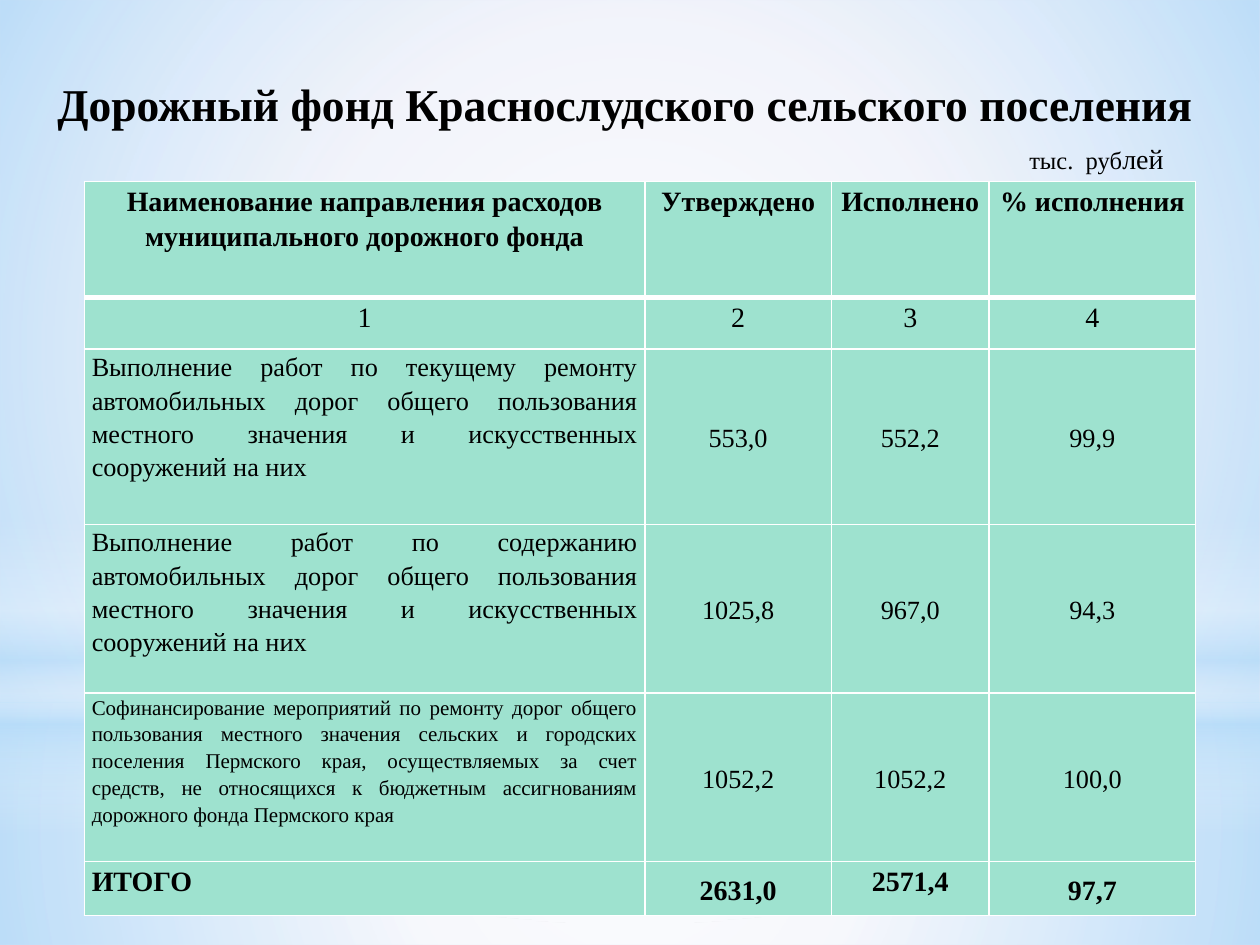
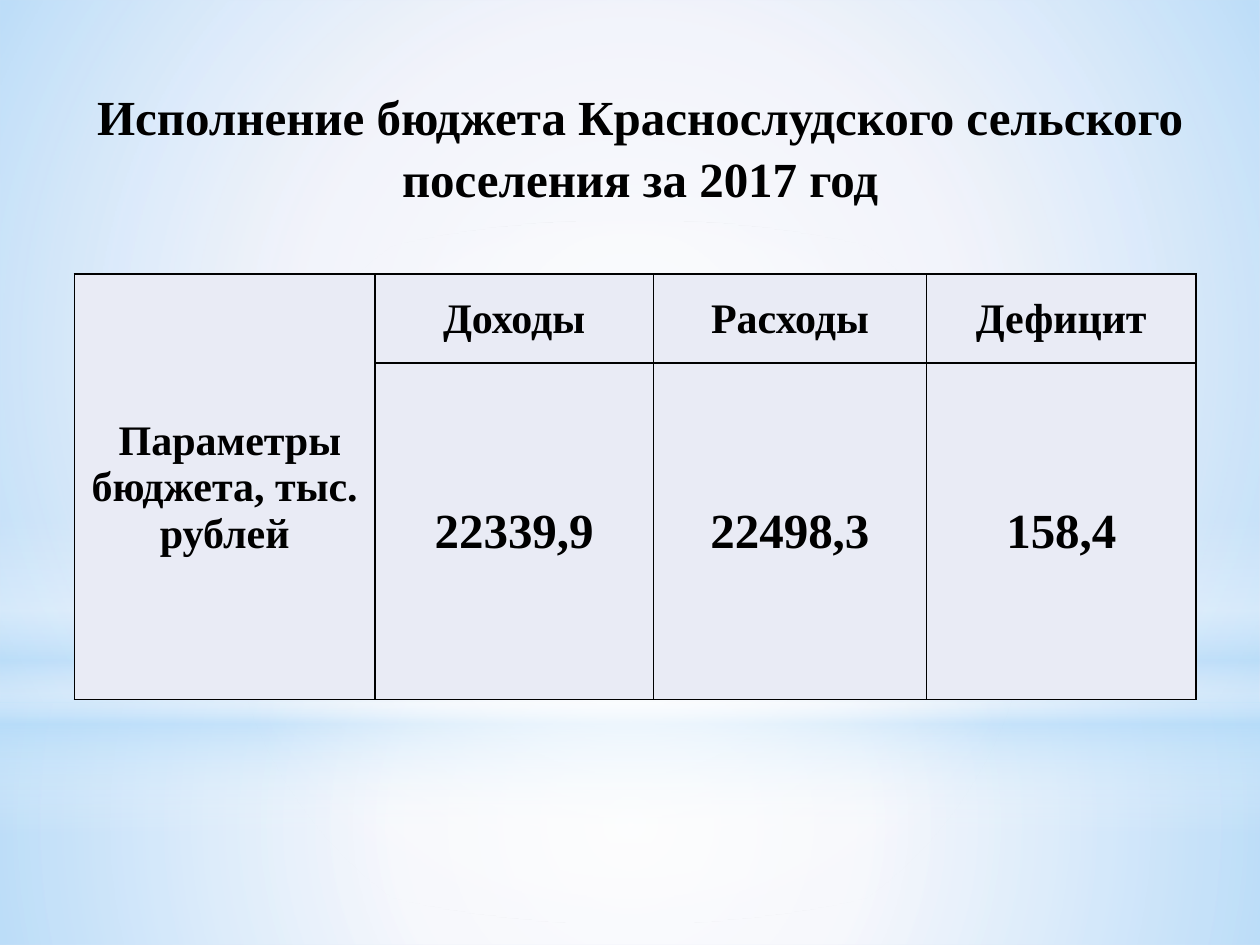
from lxml import etree
from pptx import Presentation
from pptx import util as u
from pptx.dml.color import RGBColor
from pptx.enum import shapes, text
from pptx.oxml import ns

BASE = RGBColor(0xDC, 0xE1, 0xF4)
WHITE = RGBColor(0xFF, 0xFF, 0xFF)
BLACK = RGBColor(0, 0, 0)
SKY = RGBColor(0xB4, 0xDC, 0xFA)
MINT = RGBColor(0x9E, 0xE2, 0xCF)
PALE = RGBColor(0xE9, 0xEB, 0xF5)
FONT = "Times New Roman"
WIDE, HIGH = 25.4, 19.05
LEFT, MID, JUST = text.PP_ALIGN.LEFT, text.PP_ALIGN.CENTER, text.PP_ALIGN.JUSTIFY
TOP, CORE = text.MSO_ANCHOR.TOP, text.MSO_ANCHOR.MIDDLE
RECT, OVAL = shapes.MSO_SHAPE.RECTANGLE, shapes.MSO_SHAPE.OVAL

# preset, top, height, stops (place %, colour, opacity %), radial
GLOWS = [
    (RECT, 14.17, 4.88, [(0, WHITE, 91), (37, WHITE, 76), (100, SKY, 79)], True),
    (RECT, 0, 14.17, [(0, WHITE, 89), (48, WHITE, 62), (100, SKY, 79)], True),
    (RECT, 10.46, 6.35, [(0, WHITE, 0), (29, WHITE, 30), (45, SKY, 40),
                         (55, WHITE, 26), (65, SKY, 60), (100, WHITE, 0)], False),
    (OVAL, 4.45, 14.17, [(0, WHITE, 100), (56, WHITE, 0)], True),
]

ROADS = [
    ["Наименование направления расходов муниципального дорожного фонда",
     "Утверждено", "Исполнено", "% исполнения"],
    ["1", "2", "3", "4"],
    ["Выполнение работ по текущему ремонту автомобильных дорог общего "
     "пользования местного значения и искусственных сооружений на них",
     "553,0", "552,2", "99,9"],
    ["Выполнение работ по содержанию автомобильных дорог общего "
     "пользования местного значения и искусственных сооружений на них",
     "1025,8", "967,0", "94,3"],
    ["Софинансирование мероприятий по ремонту дорог общего пользования "
     "местного значения сельских и городских поселения Пермского края, "
     "осуществляемых за счет средств, не относящихся к бюджетным "
     "ассигнованиям дорожного фонда Пермского края",
     "1052,2", "1052,2", "100,0"],
    ["ИТОГО", "2631,0", "2571,4", "97,7"],
]
BUDGET = [
    [" Параметры бюджета, тыс. рублей", "Доходы", "Расходы", "Дефицит"],
    ["", "22339,9", "22498,3", "158,4"],
]


def style(item, **look):
    for key, value in look.items():
        setattr(item, key, value)


def node(home, tag, **attrs):
    part = etree.SubElement(home, ns.qn("a:" + tag))
    for key, value in attrs.items():
        part.set(key, str(value))
    return part


def write(para, words, size, bold=False, align=LEFT, gap=1.0):
    style(para, alignment=align, line_spacing=gap)
    run = para.add_run()
    run.text = words
    style(run.font, name=FONT, size=u.Pt(size), bold=bold)
    run.font.color.rgb = BLACK


def fade(shape, stops, radial):
    """Fill a shape with a gradient whose stops have their own opacity."""
    shape.fill.background()
    props = shape.fill._xPr
    blank = props.find(ns.qn("a:noFill"))
    grad = etree.Element(ns.qn("a:gradFill"), rotWithShape="1")
    row = node(grad, "gsLst")
    for place, hue, alpha in stops:
        stop = node(row, "gs", pos=place * 1000)
        node(node(stop, "srgbClr", val=hue), "alpha", val=alpha * 1000)
    if radial:
        way = node(grad, "path", path="circle")
        node(way, "fillToRect", **dict.fromkeys("ltrb", 50000))
    else:
        node(grad, "lin", ang=5400000, scaled=0)
    props.replace(blank, grad)


def backdrop(slide):
    for kind, top, high, stops, radial in GLOWS:
        glow = slide.shapes.add_shape(kind, 0, u.Cm(top), u.Cm(WIDE), u.Cm(high))
        glow.shadow.inherit = False
        glow.line.fill.background()
        fade(glow, stops, radial)


def label(slide, box, wrap=True):
    frame = slide.shapes.add_textbox(*map(u.Cm, box)).text_frame
    style(frame, word_wrap=wrap, vertical_anchor=TOP)
    return frame.paragraphs[0]


def title(slide, box, words, size):
    write(label(slide, box), words, size, True, MID, 1.05)


def edge(cell, hue, **widths):
    """Draw the four cell borders, 1 pt unless a side names its width."""
    props = cell._tc.get_or_add_tcPr()
    for side in "LRTB":
        line = node(props, "ln" + side, w=u.Pt(widths.get(side, 1)))
        node(node(line, "solidFill"), "srgbClr", val=hue)


def grid(slide, spot, cols, rows):
    """Add a plain table at spot with the given column widths and row heights."""
    box = (*spot, sum(cols), sum(rows))
    table = slide.shapes.add_table(len(rows), len(cols), *map(u.Cm, box)).table
    style(table, first_row=False, horz_banding=False)
    for col, wide in zip(table.columns, cols):
        col.width = u.Cm(wide)
    for row, high in zip(table.rows, rows):
        row.height = u.Cm(high)
    return table


def paint(cell, hue, anchor, side, top):
    style(cell, vertical_anchor=anchor, margin_left=u.Cm(side),
          margin_right=u.Cm(side), margin_top=u.Cm(top), margin_bottom=0)
    cell.fill.solid()
    cell.fill.fore_color.rgb = hue


def roads(slide, spot):
    table = grid(slide, spot, [11.3, 3.76, 3.18, 4.16],
                 [2.34, 1.04, 3.53, 3.4, 3.4, 1.09])
    sizes = [16, 16, 15, 15, 15, 16]
    last = len(ROADS) - 1
    for r, line in enumerate(ROADS):
        for c, words in enumerate(line):
            cell = table.cell(r, c)
            edge(cell, WHITE, **{0: {"B": 3}, 1: {"T": 3}}.get(r, {}))
            high = r < 2 or c == 0 or (r, c) == (last, 2)
            paint(cell, MINT, TOP if high else CORE, 0.15, 0)
            size = 12 if (r, c) == (4, 0) else sizes[r]
            align = JUST if r > 1 and c == 0 else MID
            write(cell.text_frame.paragraphs[0], words, size,
                  r in (0, last), align, 1.15)


def budget(slide, spot):
    table = grid(slide, spot, [6.06, 5.61, 5.51, 5.43], [1.8, 6.78])
    for r, line in enumerate(BUDGET):
        for c, words in enumerate(line):
            cell = table.cell(r, c)
            edge(cell, BLACK)
            paint(cell, PALE, CORE, 0.03, 0.03)
            if words:
                write(cell.text_frame.paragraphs[0], words, 28 if r else 24,
                      True, MID)
    table.cell(0, 0).merge(table.cell(1, 0))


def fund(slide):
    title(slide, (0.71, 1.36, 23.8, 1.4),
          "Дорожный фонд Краснослудского сельского поселения", 26)
    roads(slide, (1.7, 3.66))
    unit = label(slide, (20.5, 2.72, 4.9, 0.94), False)
    write(unit, "тыс.  руб", 14)
    write(unit, "лей", 16)


def result(slide):
    title(slide, (1.5, 1.56, 22.81, 3.05),
          "Исполнение бюджета Краснослудского сельского поселения за 2017 год", 28)
    budget(slide, (1.5, 5.52))


def main():
    deck = Presentation()
    style(deck, slide_width=u.Cm(WIDE), slide_height=u.Cm(HIGH))
    ground = deck.slide_master.background.fill
    ground.solid()
    ground.fore_color.rgb = BASE
    for build in (fund, result):
        slide = deck.slides.add_slide(deck.slide_layouts[6])
        backdrop(slide)
        build(slide)
    deck.save("out.pptx")


if __name__ == "__main__":
    main()
